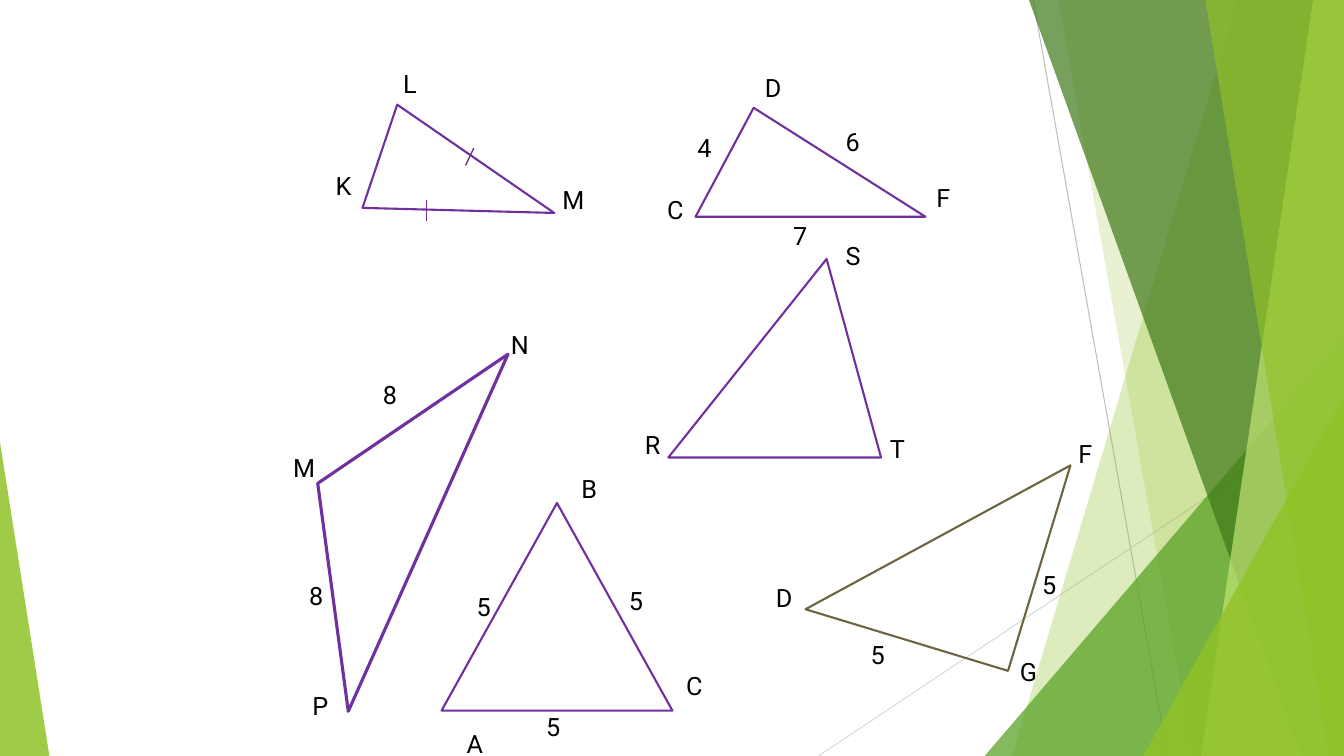
import pptx
import pptx.util
import pptx.dml.color
import pptx.enum.shapes
import pptx.enum.text
import pptx.oxml.ns
import lxml.etree

Pt = pptx.util.Pt
SHAPE = pptx.enum.shapes.MSO_SHAPE
PURPLE, OLIVE, LIME = "7030A0", "6D6540", "90C226"
W, H = 960, 540


def rgb(value):
    return pptx.dml.color.RGBColor.from_string(value)


class Sketch:
    font, size, ink = "Roboto", 18, "000000"
    widths = {"K": 23.8, "L": 22.3, "M": 30.2, "D": 25.9, "G": 25.9, "N": 25.9,
              "F": 23, "S": 23, "T": 23, "P": 23.8}

    def __init__(self, slide):
        self.s = slide

    def line(self, x1, y1, x2, y2, color, width):
        sp = self.s.shapes.add_connector(
            pptx.enum.shapes.MSO_CONNECTOR.STRAIGHT, Pt(x1), Pt(y1), Pt(x2), Pt(y2))
        sp.line.color.rgb = rgb(color)
        sp.line.width = Pt(width)
        lxml.etree.SubElement(sp.element.spPr, pptx.oxml.ns.qn("a:effectLst"))

    def tint(self, sp, color, alpha):
        sp.shadow.inherit = False
        sp.line.fill.background()
        sp.fill.solid()
        sp.fill.fore_color.rgb = rgb(color)
        clr = sp.element.spPr.find(".//" + pptx.oxml.ns.qn("a:srgbClr"))
        lxml.etree.SubElement(clr, pptx.oxml.ns.qn("a:alpha"), val=str(alpha * 1000))

    def panel(self, top, bottom, color, alpha):
        fb = self.s.shapes.build_freeform(Pt(top), 0, scale=1.0)
        fb.add_line_segments([(Pt(x), Pt(y)) for x, y in ((W, 0), (W, H), (bottom, H))])
        self.tint(fb.convert_to_shape(), color, alpha)

    def place(self, kind, x, y, w, h, adj):
        sp = self.s.shapes.add_shape(kind, Pt(x), Pt(y), Pt(w), Pt(h))
        if adj is not None:
            sp.adjustments[0] = adj
        return sp

    def wedge(self, x, y, w, adj, color, alpha):
        self.tint(self.place(SHAPE.ISOSCELES_TRIANGLE, x, y, w, H - y, adj), color, alpha)

    def triangle(self, x, y, w, h, adj=0.5, rotation=0, color=PURPLE, width=1.5,
                 kind=SHAPE.ISOSCELES_TRIANGLE):
        sp = self.place(kind, x, y, w, h, adj)
        sp.shadow.inherit = False
        sp.rotation = rotation
        sp.fill.background()
        sp.line.color.rgb = rgb(color)
        sp.line.width = Pt(width)

    def label(self, text, x, y):
        width = self.widths.get(text, 23.8 if text.isdigit() else 24.5)
        sp = self.s.shapes.add_textbox(Pt(x), Pt(y), Pt(width), Pt(29))
        tf = sp.text_frame
        tf.word_wrap = False
        tf.auto_size = pptx.enum.text.MSO_AUTO_SIZE.SHAPE_TO_FIT_TEXT
        r = tf.paragraphs[0].add_run()
        r.text = text
        r.font.name = self.font
        r.font.size = Pt(self.size)
        r.font.color.rgb = rgb(self.ink)


LABELS = [
    ("K", 232.6, 118.1), ("L", 280.8, 45.4), ("M", 394.6, 128.2),
    ("D", 547.2, 412.6), ("5", 614.9, 452.9), ("G", 721.4, 465.1),
    ("5", 737.3, 403.2), ("F", 763.2, 309.6),
    ("D", 539.3, 48.2), ("C", 469.4, 135.4), ("F", 661.7, 126.7),
    ("6", 596.9, 86.4), ("4", 491, 90.7), ("7", 559.4, 154.1),
    ("R", 453.6, 303.1), ("S", 596.9, 167.8), ("T", 628.6, 306),
    ("M", 202.3, 319.7), ("N", 357.8, 231.8), ("P", 216, 489.6),
    ("8", 266.4, 267.1), ("8", 213.8, 411.1),
    ("A", 326.2, 517), ("B", 408.2, 334.8), ("C", 483.1, 475.2),
    ("5", 333.4, 419), ("5", 383, 504.7), ("5", 442.1, 414.7),
]


def main():
    prs = pptx.Presentation()
    prs.slide_width, prs.slide_height = Pt(W), Pt(H)
    sk = Sketch(prs.slides.add_slide(prs.slide_layouts[6]))

    sk.line(738, 0, 834, H, "BFBFBF", 0.75)
    sk.line(W, 290, 584.6, H, "D9D9D9", 0.75)
    sk.panel(884, 723, LIME, 30)
    sk.panel(756, 852, LIME, 20)
    sk.wedge(703.4, 240, 256.6, 1, "54A021", 72)
    sk.panel(735, 929.5, "3F7819", 70)
    sk.panel(938, 858, "C0E474", 70)
    sk.panel(861, 949, LIME, 65)
    sk.wedge(816.5, 283, 143.5, 1, LIME, 80)
    sk.wedge(0, 316, 35.3, 0, LIME, 85)

    sk.triangle(294.5, 67, 77.8, 131, 0.483, 108.6)
    sk.triangle(593.3, 308.2, 153.4, 151.2, None, 286.9, OLIVE, kind=SHAPE.RIGHT_TRIANGLE)
    sk.triangle(496.8, 77, 164.2, 77.8, 0.253)
    sk.triangle(315.4, 359.3, 164.9, 148.3)
    sk.triangle(126.7, 319.7, 279.4, 86.4, rotation=294.1, width=2.25)
    sk.triangle(477.4, 185, 151.9, 141.8, 0.744)
    sk.line(338.4, 105.8, 332.6, 118.1, PURPLE, 1)
    sk.line(304.6, 142.6, 304.6, 157.7, PURPLE, 1)

    for text, x, y in LABELS:
        sk.label(text, x, y)
    prs.save("out.pptx")


if __name__ == "__main__":
    main()
